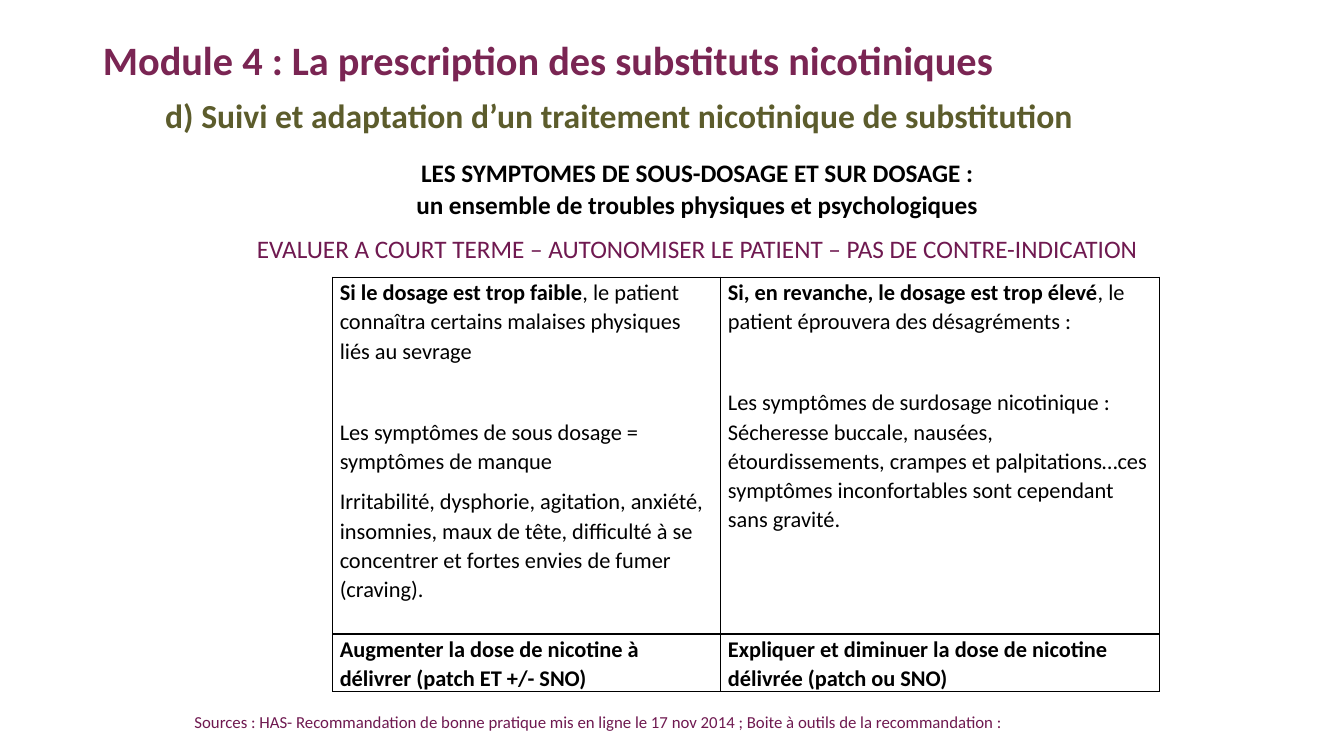
from pptx import Presentation
from pptx.dml.color import RGBColor
from pptx.enum.text import MSO_ANCHOR, MSO_AUTO_SIZE, PP_ALIGN
from pptx.oxml import parse_xml
from pptx.oxml.ns import nsdecls
from pptx.util import Inches, Pt

# Content
FONT = "Calibri"
COLORS = {"title": "7A2553", "subtitle": "5C5C2C", "accent": "6F1950", "text": "000000"}
TITLE = "Module 4 : La prescription des substituts nicotiniques"
SUBTITLE = "d) Suivi et adaptation d’un traitement nicotinique de substitution"
HEADING = ("LES SYMPTOMES DE SOUS-DOSAGE ET SUR DOSAGE :\v"
           "un ensemble de troubles physiques et psychologiques")
MESSAGE = "EVALUER A COURT TERME – AUTONOMISER LE PATIENT – PAS DE CONTRE-INDICATION"
SOURCES = ("Sources : HAS- Recommandation de bonne pratique mis en ligne le 17 nov 2014 ; "
           "Boite à outils de la recommandation :")

# Each cell is a list of paragraphs: (bold part, plain part, space after in points)
ROWS = [
    [
        [("Si le dosage est trop faible",
          ", le patient connaîtra certains malaises physiques liés au sevrage", 37),
         ("", "Les symptômes de sous dosage = symptômes de manque", 8),
         ("", "Irritabilité, dysphorie, agitation, anxiété, insomnies, maux de tête, "
              "difficulté à se concentrer et fortes envies de fumer (craving).", 8)],
        [("Si, en revanche, le dosage est trop élevé",
          ", le patient éprouvera des désagréments :", 37),
         ("", "Les symptômes de surdosage nicotinique : Sécheresse buccale, nausées, "
              "étourdissements, crampes et palpitations…ces symptômes inconfortables "
              "sont cependant sans gravité.", 8)],
    ],
    [
        [("Augmenter la dose de nicotine à délivrer (patch ET +/- SNO)", "", 8)],
        [("Expliquer et diminuer la dose de nicotine délivrée (patch ou SNO)", "", 8)],
    ],
]
COL_WIDTHS = [3.85, 4.35]
ROW_HEIGHTS = [3.54, 0.57]


def format_paragraph(p, size, color, bold=None, align=PP_ALIGN.LEFT, spacing=1.07, after=8):
    p.alignment = align
    p.line_spacing = spacing
    p.space_before, p.space_after = Pt(0), Pt(after)
    p.font.name, p.font.size, p.font.bold = FONT, Pt(size), bold
    p.font.color.rgb = RGBColor.from_string(COLORS[color])


def add_text(s, box, texts):
    tf = s.shapes.add_textbox(*map(Inches, box)).text_frame
    tf.word_wrap = True
    for i, (text, style) in enumerate(texts):
        p = tf.add_paragraph() if i else tf.paragraphs[0]
        p.text = text
        format_paragraph(p, **style)
    return tf


def fill_cell(cell, paragraphs):
    cell.margin_left = cell.margin_right = Inches(0.07)
    cell.margin_top = cell.margin_bottom = 0
    cell.fill.background()
    for i, (strong, plain, after) in enumerate(paragraphs):
        p = cell.text_frame.add_paragraph() if i else cell.text_frame.paragraphs[0]
        format_paragraph(p, 16, "text", after=after)
        for text, bold in ((strong, True), (plain, False)):
            if text:
                r = p.add_run()
                r.text, r.font.bold = text, bold
    # Borders go before the fill
    tcPr = cell._tc.get_or_add_tcPr()
    for i, side in enumerate("LRTB"):
        tcPr.insert(i, parse_xml(
            f'<a:ln{side} {nsdecls("a")} w="{Pt(1)}"><a:solidFill>'
            f'<a:srgbClr val="{COLORS["text"]}"/></a:solidFill></a:ln{side}>'))


def main():
    prs = Presentation()
    prs.slide_width, prs.slide_height = Inches(13.33), Inches(7.5)
    s = prs.slides.add_slide(prs.slide_layouts[5])

    # Title
    title = s.shapes.title
    title.left, title.top, title.width, title.height = map(Inches, (0.92, 0.4, 11.5, 0.49))
    tf = title.text_frame
    tf.text = TITLE
    tf.auto_size = MSO_AUTO_SIZE.NONE
    tf.vertical_anchor = MSO_ANCHOR.MIDDLE
    format_paragraph(tf.paragraphs[0], 28.8, "title", True, spacing=0.7, after=0)

    # Subtitle
    tf = add_text(s, (1.15, 0.89, 11.39, 0.5),
                  [(SUBTITLE, dict(size=24, color="subtitle", bold=True, spacing=1.0, after=0))])
    tf.paragraphs[0]._p.get_or_add_pPr().set("marL", str(Inches(0.39)))

    # Heading and key message
    add_text(s, (1.49, 1.49, 10.85, 1.17), [
        (HEADING, dict(size=18, color="text", bold=True, align=PP_ALIGN.CENTER)),
        (MESSAGE, dict(size=18, color="accent", align=PP_ALIGN.CENTER)),
    ])

    # Dosage table
    table = s.shapes.add_table(
        len(ROWS), len(COL_WIDTHS), Inches(3.3), Inches(2.75),
        Inches(sum(COL_WIDTHS)), Inches(sum(ROW_HEIGHTS))).table
    table.first_row = table.horz_banding = False
    for column, width in zip(table.columns, COL_WIDTHS):
        column.width = Inches(width)
    for row, height, contents in zip(table.rows, ROW_HEIGHTS, ROWS):
        row.height = Inches(height)
        for cell, paragraphs in zip(row.cells, contents):
            fill_cell(cell, paragraphs)

    # Sources
    add_text(s, (1.83, 6.98, 11.5, 0.32),
             [(SOURCES, dict(size=12, color="accent", align=PP_ALIGN.JUSTIFY, spacing=1.15))])

    prs.save("out.pptx")


if __name__ == "__main__":
    main()
